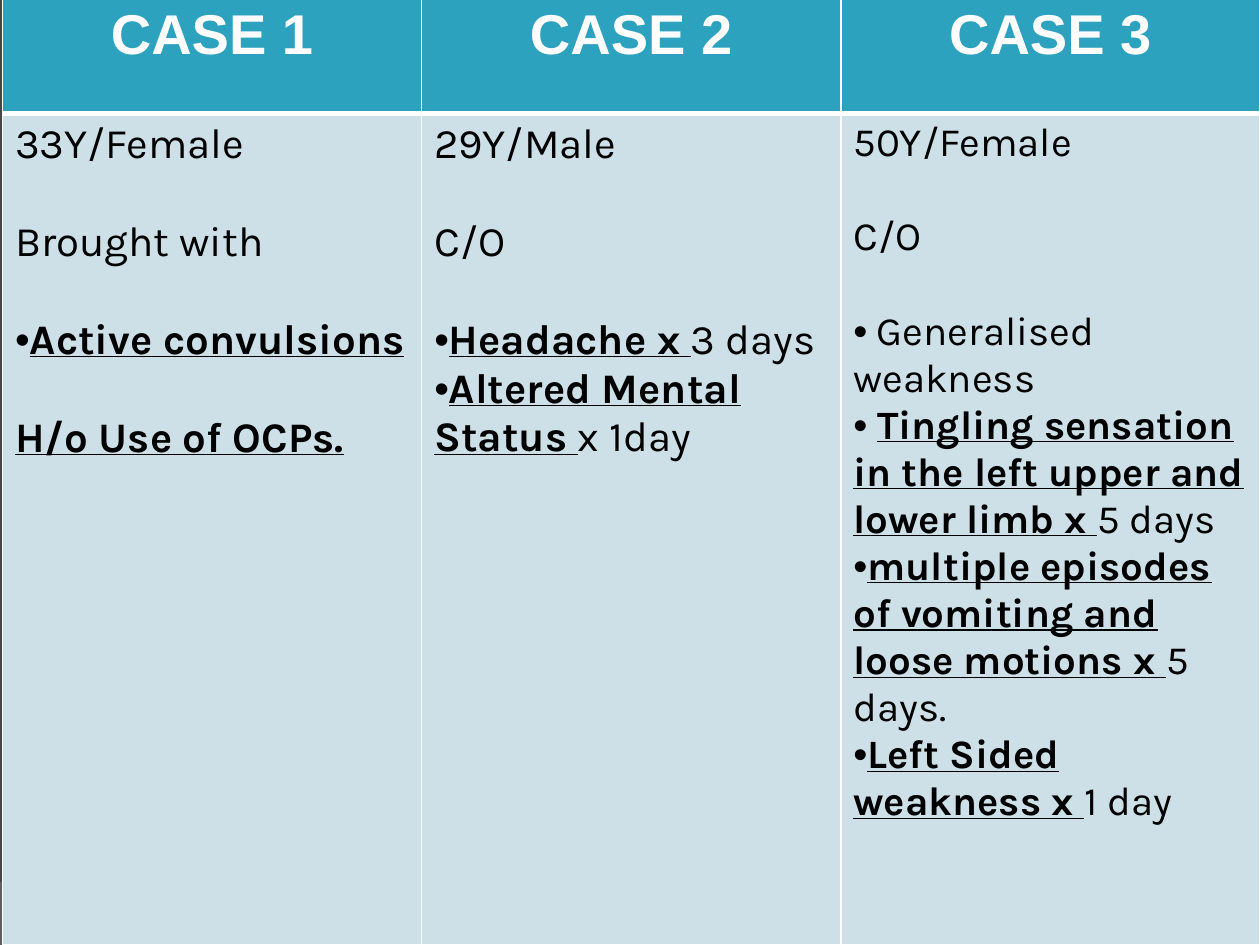
"""Build a slide with a table that compares three patient cases."""
from lxml.etree import SubElement as Sub
from pptx import Presentation
from pptx.dml.color import RGBColor
from pptx.enum.text import PP_ALIGN as Align
from pptx.oxml.ns import qn
from pptx.util import Inches, Pt

WIDE, HIGH = 10, 7.5
EDGE, HEAD = 0.02, 0.92
TEAL, PALE, WHITE, BLACK = "2DA2BF", "CDE0E8", "FFFFFF", "000000"
GREY, MIST = "464646", "7F7F7F"
WAVE = [(10, 5.2), (5.59, 7.29), (3.91, 7.19), (0, 7.05)]
STEPS = 24

LINE, GAP, DOT, DOTGAP = (0, 0), (1, 0), (0, 1), (1, 1)
CASES = [
    ("CASE 1", 24, [
        (LINE, "33Y/Female"),
        (GAP, "Brought with"),
        (DOTGAP, "|Active convulsions"),
        (GAP, "|H/o Use of OCPs."),
    ]),
    ("CASE 2", 24, [
        (LINE, "29Y/Male"),
        (GAP, "C/O"),
        (DOTGAP, "|Headache x |3 days"),
        (DOT, "|Altered Mental Status |x 1day"),
    ]),
    ("CASE 3", 23, [
        (LINE, "50Y/Female"),
        (GAP, "C/O"),
        (DOTGAP, " Generalised weakness"),
        (DOT, " |Tingling sensation in the left upper and lower limb x |5 days"),
        (DOT, "|multiple episodes of vomiting and loose motions x |5 days."),
        (DOT, "|Left Sided weakness x |1 day"),
    ]),
]


def rgb(code):
    """Turn a hex string into a colour."""
    return RGBColor.from_string(code)


def curve(t):
    """Find the point of the wave at a share of its length."""
    s = 1 - t
    parts = (s ** 3, 3 * s * s * t, 3 * s * t * t, t ** 3)
    return tuple(sum(k * p[i] for k, p in zip(parts, WAVE)) for i in (0, 1))


def swell(slide):
    """Draw the pale wave along the foot of the slide."""
    foot = HIGH + 0.01
    pen = slide.shapes.build_freeform(0, foot, scale=Inches(1))
    crest = [curve(i / STEPS) for i in range(STEPS + 1)]
    pen.add_line_segments([(WIDE, foot)] + crest, close=True)
    wave = pen.convert_to_shape()
    wave.shadow.inherit = False
    wave.line.fill.background()
    wave.fill.solid()
    wave.fill.fore_color.rgb = rgb(MIST)
    tint = wave._element.spPr.find(qn("a:solidFill"))[0]
    Sub(tint, qn("a:alpha"), val="45000")


def style(run, face, size, tint, bold, under=False):
    """Format one run."""
    font = run.font
    font.name, font.size, font.bold, font.underline = face, Pt(size), bold, under
    font.color.rgb = rgb(tint)


def paint(cell, tint, top, base):
    """Draw the borders of a cell and fill it."""
    props = cell._tc.get_or_add_tcPr()
    for side, wide in zip("LRTB", (1, 1, top, base)):
        line = Sub(props, qn(f"a:ln{side}"), w=str(Pt(wide)))
        Sub(Sub(line, qn("a:solidFill")), qn("a:srgbClr"), val=WHITE)
    cell.fill.solid()
    cell.fill.fore_color.rgb = rgb(tint)


def write(para, kind, text, size):
    """Write one line of a case; bars switch bold underline on and off."""
    gap, dot = kind
    para.space_before = Pt(round(size * 1.17) * gap)
    if dot:
        props = para._p.get_or_add_pPr()
        props.set("marL", "0")
        props.set("indent", "0")
        Sub(props, qn("a:buFont"), typeface="Arial")
        Sub(props, qn("a:buChar"), char="•")
    for i, part in enumerate(text.split("|")):
        if part:
            run = para.add_run()
            run.text = part
            strong = i % 2 == 1
            style(run, "Karla", size, BLACK, strong, strong)


def main():
    """Make the slide and save it."""
    deck = Presentation()
    deck.slide_width, deck.slide_height = Inches(WIDE), Inches(HIGH)
    slide = deck.slides.add_slide(deck.slide_layouts[6])
    back = slide.background.fill
    back.solid()
    back.fore_color.rgb = rgb(GREY)
    swell(slide)

    wide, high = WIDE - EDGE, HIGH + EDGE
    box = (Inches(n) for n in (EDGE, -EDGE, wide, high))
    table = slide.shapes.add_table(2, len(CASES), *box).table
    for row, tall in zip(table.rows, (HEAD, high - HEAD)):
        row.height = Inches(tall)

    for col, (name, size, lines) in enumerate(CASES):
        table.columns[col].width = Inches(wide / len(CASES))
        head, body = table.cell(0, col), table.cell(1, col)
        paint(head, TEAL, 1, 3)
        paint(body, PALE, 3, 1)
        title = head.text_frame.paragraphs[0]
        title.text = name
        title.alignment = Align.CENTER
        style(title.runs[0], "Arial", 32, WHITE, True)
        frame = body.text_frame
        for i, (kind, text) in enumerate(lines):
            para = frame.add_paragraph() if i else frame.paragraphs[0]
            write(para, kind, text, size)

    deck.save("out.pptx")


if __name__ == "__main__":
    main()
